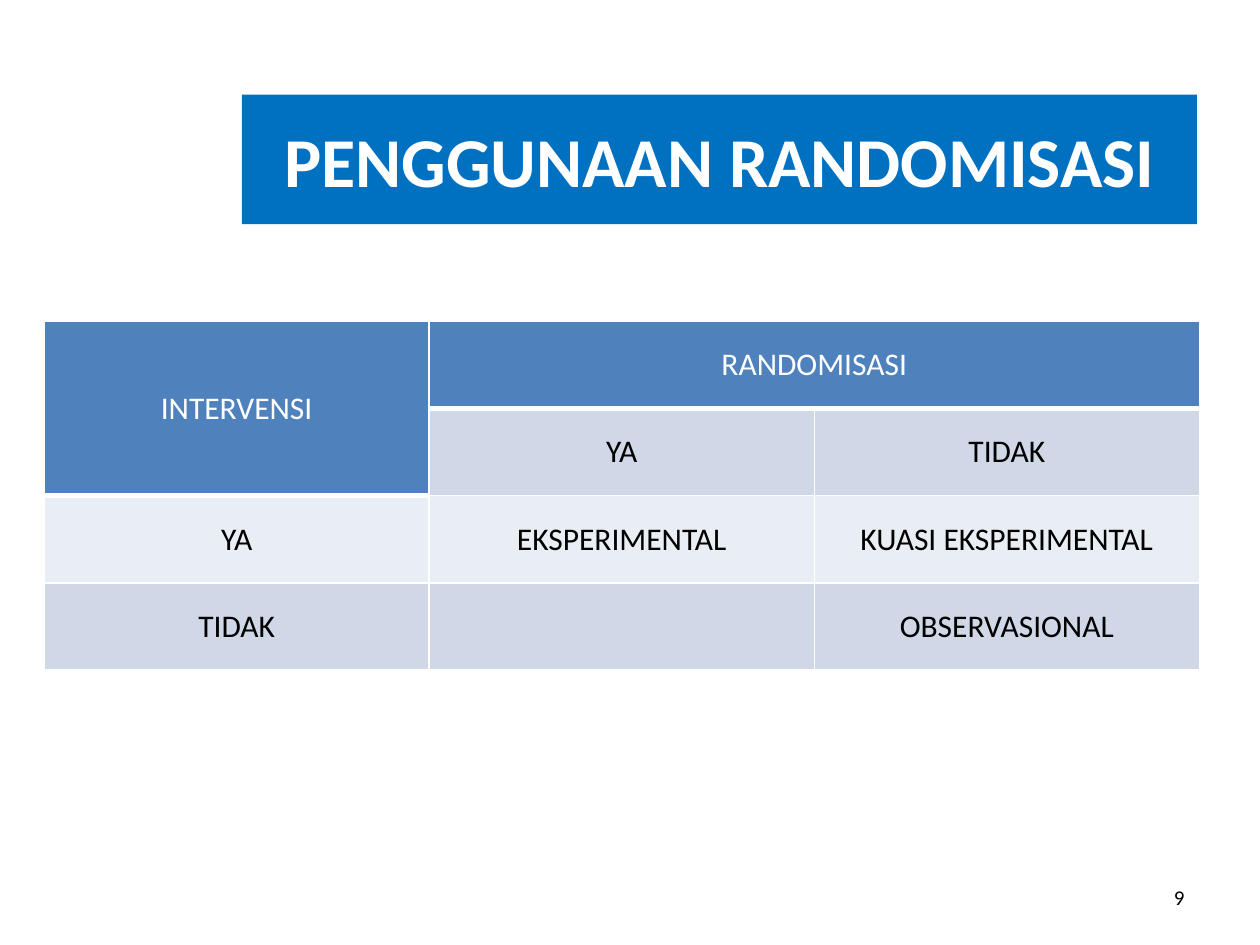
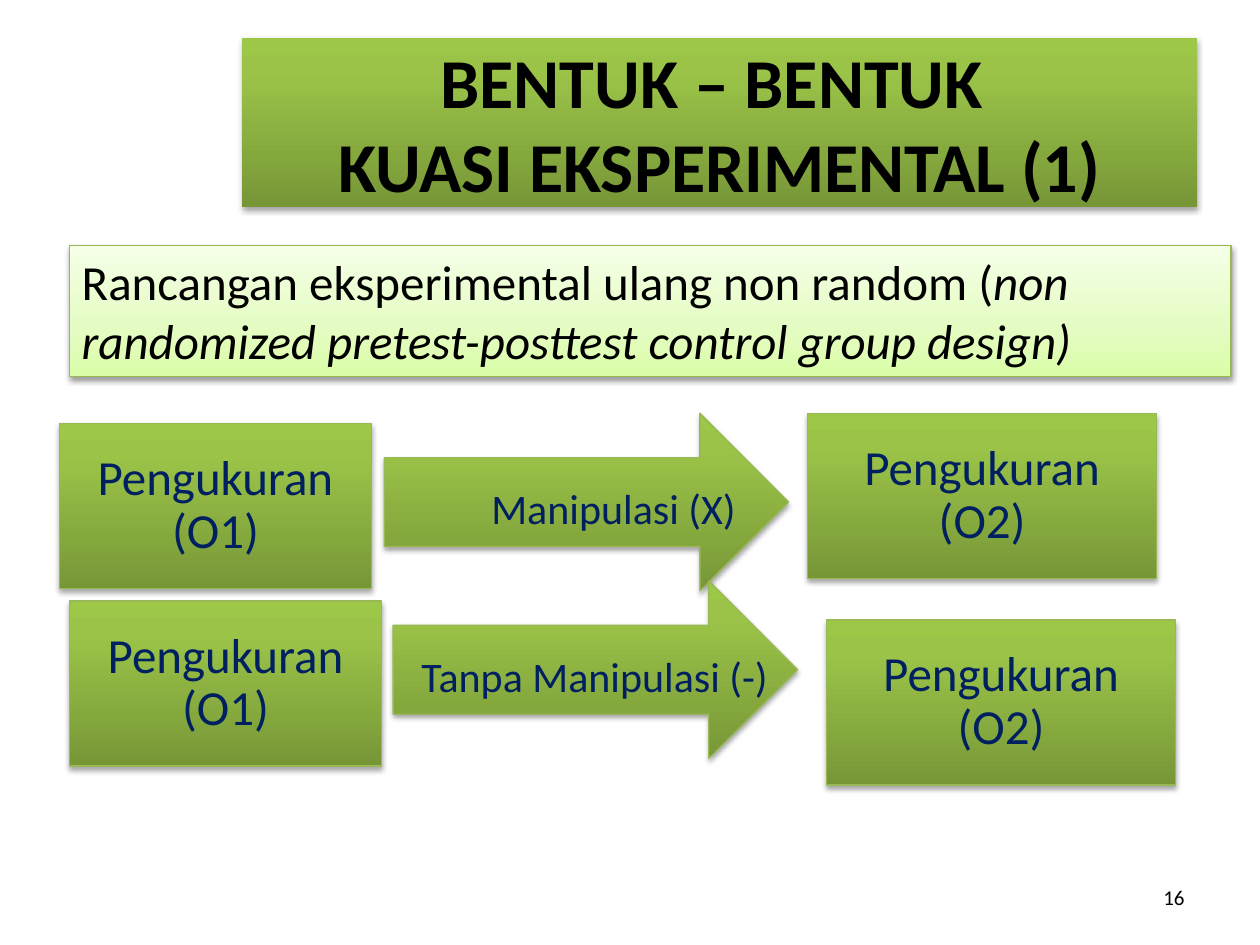
from lxml import etree
from pptx import Presentation
from pptx.dml.color import RGBColor
from pptx.enum import shapes, text
from pptx.oxml import ns
from pptx.util import Inches, Pt

FONT = "Calibri"
COLORS = {
    "white": "FFFFFF", "black": "000000", "navy": "002060",
    "title": "0070C0", "header": "4F81BD", "band": "D0D8E8",
    "light": "E9EDF4", "edge": "98B955",
}
GREEN = [(0, "779737"), (80, "9BC348"), (100, "9DC746")]
PALE = [(0, "DAFDA7"), (35, "E4FCC2"), (100, "F5FFE7")]
CENTER = text.PP_ALIGN.CENTER
MIDDLE = text.MSO_ANCHOR.MIDDLE


def rgb(name):
    return RGBColor.from_string(COLORS[name])


def sub(parent, tag, **attrs):
    return etree.SubElement(parent, ns.qn(tag), {k: str(v) for k, v in attrs.items()})


def style_text(p, size, color, align=CENTER, bold=False):
    p.alignment = align
    for r in p.runs:
        r.font.name, r.font.size, r.font.bold = FONT, Pt(size), bold
        r.font.color.rgb = rgb(color)


def place(sp, left, top, width, height):
    sp.left, sp.top = Inches(left), Inches(top)
    sp.width, sp.height = Inches(width), Inches(height)


def set_gradient(sp, stops):
    """Fill from bottom to top with the given (percent, hex) stops."""
    sp.fill.gradient()
    sp.fill.gradient_angle = 90
    stop_list = sp._element.spPr.find(".//" + ns.qn("a:gsLst"))
    for old in list(stop_list):
        stop_list.remove(old)
    for pos, color in stops:
        sub(sub(stop_list, "a:gs", pos=pos * 1000), "a:srgbClr", val=color)


def set_shadow(sp, alpha=35, dist=1.8):
    sp.shadow.inherit = False
    effects = sp._element.spPr.find(ns.qn("a:effectLst"))
    shadow = sub(effects, "a:outerShdw", blurRad=Pt(3.1), dist=Pt(dist),
                 dir=5400000, rotWithShape=0)
    sub(sub(shadow, "a:srgbClr", val=COLORS["black"]), "a:alpha", val=alpha * 1000)


def add_title(s, words, top, height, color):
    sp = s.shapes.title
    place(sp, 1.92, top, 7.58, height)
    tf = sp.text_frame
    tf.text = words
    tf.auto_size = text.MSO_AUTO_SIZE.NONE
    tf.vertical_anchor = MIDDLE
    style_text(tf.paragraphs[0], 40, color, bold=True)
    return sp


def add_page_number(s, number):
    box = s.shapes.add_textbox(Inches(7.92), Inches(6.92), Inches(1.58), Inches(0.4))
    tf = box.text_frame
    tf.word_wrap = True
    tf.vertical_anchor = MIDDLE
    tf.text = str(number)
    style_text(tf.paragraphs[0], 12, "black", text.PP_ALIGN.RIGHT)


def add_glossy(s, kind, left, top, width, height, stops=GREEN, **shadow):
    sp = s.shapes.add_shape(kind, Inches(left), Inches(top), Inches(width), Inches(height))
    set_gradient(sp, stops)
    sp.line.color.rgb = rgb("edge")
    sp.line.width = Pt(0.75)
    set_shadow(sp, **shadow)
    return sp


def set_label(sp, words, size, inset):
    tf = sp.text_frame
    tf.word_wrap = True
    tf.vertical_anchor = MIDDLE
    tf.margin_left = tf.margin_right = tf.margin_top = tf.margin_bottom = Inches(inset)
    tf.text = words
    p = tf.paragraphs[0]
    p.line_spacing = 0.9
    p.space_after = Pt(size * 0.35)
    style_text(p, size, "navy")


def add_measurement(s, words, left, top, width):
    sp = add_glossy(s, shapes.MSO_SHAPE.RECTANGLE, left, top, width, 1.31)
    set_label(sp, words, 28, 0.15)


def add_treatment(s, words, left, top, label_left):
    add_glossy(s, shapes.MSO_SHAPE.RIGHT_ARROW, left, top, 3.21, 1.41)
    box = s.shapes.add_textbox(Inches(label_left), Inches(top + 0.31),
                               Inches(3.5), Inches(0.93))
    set_label(box, words, 24, 0.16)


def set_borders(cell, bottom):
    tc_pr = cell._tc.get_or_add_tcPr()
    widths = {"a:lnL": 1, "a:lnR": 1, "a:lnT": 1, "a:lnB": bottom}
    for i, (tag, width) in enumerate(widths.items()):
        ln = sub(tc_pr, tag, w=Pt(width))
        sub(sub(ln, "a:solidFill"), "a:srgbClr", val=COLORS["white"])
        tc_pr.insert(i, ln)


def add_design_table(s):
    rows = [
        ["INTERVENSI", "RANDOMISASI", ""],
        ["", "YA", "TIDAK"],
        ["YA", "EKSPERIMENTAL", "KUASI EKSPERIMENTAL"],
        ["TIDAK", "", "OBSERVASIONAL"],
    ]
    table = s.shapes.add_table(4, 3, Inches(0.35), Inches(2.55),
                               Inches(9.17), Inches(2.77)).table
    for i, row in enumerate(rows):
        for j, words in enumerate(row):
            cell = table.cell(i, j)
            header = i == 0 or (i == 1 and j == 0)
            cell.text = words
            cell.vertical_anchor = MIDDLE
            style_text(cell.text_frame.paragraphs[0], 18, "white" if header else "black")
            cell.fill.solid()
            cell.fill.fore_color.rgb = rgb("header" if header else "band" if i % 2 else "light")
            set_borders(cell, 3 if i == 0 else 1)
    table.cell(0, 0).merge(table.cell(1, 0))
    table.cell(0, 1).merge(table.cell(0, 2))


def add_design_name(s):
    sp = add_glossy(s, shapes.MSO_SHAPE.RECTANGLE, 0.55, 1.95, 9.22, 1.04,
                    PALE, alpha=38, dist=1.6)
    tf = sp.text_frame
    tf.word_wrap = True
    tf.vertical_anchor = text.MSO_ANCHOR.TOP
    tf.auto_size = text.MSO_AUTO_SIZE.SHAPE_TO_FIT_TEXT
    p = tf.paragraphs[0]
    p.text = "Rancangan eksperimental ulang non random ("
    r = p.add_run()
    r.text = "non randomized pretest-posttest control group design)"
    r.font.italic = True
    style_text(p, 28, "black", text.PP_ALIGN.LEFT)


def build_randomisation(prs):
    s = prs.slides.add_slide(prs.slide_layouts[5])
    title = add_title(s, "PENGGUNAAN RANDOMISASI", 0.75, 1.03, "white")
    title.fill.solid()
    title.fill.fore_color.rgb = rgb("title")
    add_design_table(s)
    add_page_number(s, 9)


def build_quasi_experiment(prs):
    s = prs.slides.add_slide(prs.slide_layouts[5])
    title = add_title(s, "BENTUK – BENTUK \vKUASI EKSPERIMENTAL (1)", 0.3, 1.34, "black")
    set_gradient(title, GREEN)
    set_shadow(title)
    add_design_name(s)
    # Treated group
    add_measurement(s, "Pengukuran (O1)", 0.47, 3.36, 2.48)
    add_treatment(s, "Manipulasi (X)", 3.05, 3.28, 3.12)
    add_measurement(s, "Pengukuran (O2)", 6.41, 3.28, 2.77)
    # Control group
    add_measurement(s, "Pengukuran (O1)", 0.55, 4.77, 2.48)
    add_treatment(s, "Tanpa Manipulasi (-)", 3.12, 4.61, 2.97)
    add_measurement(s, "Pengukuran (O2)", 6.56, 4.92, 2.77)
    add_page_number(s, 16)


def main():
    prs = Presentation()
    prs.slide_width, prs.slide_height = Inches(10), Inches(7.5)
    build_randomisation(prs)
    build_quasi_experiment(prs)
    prs.save("out.pptx")


if __name__ == "__main__":
    main()
